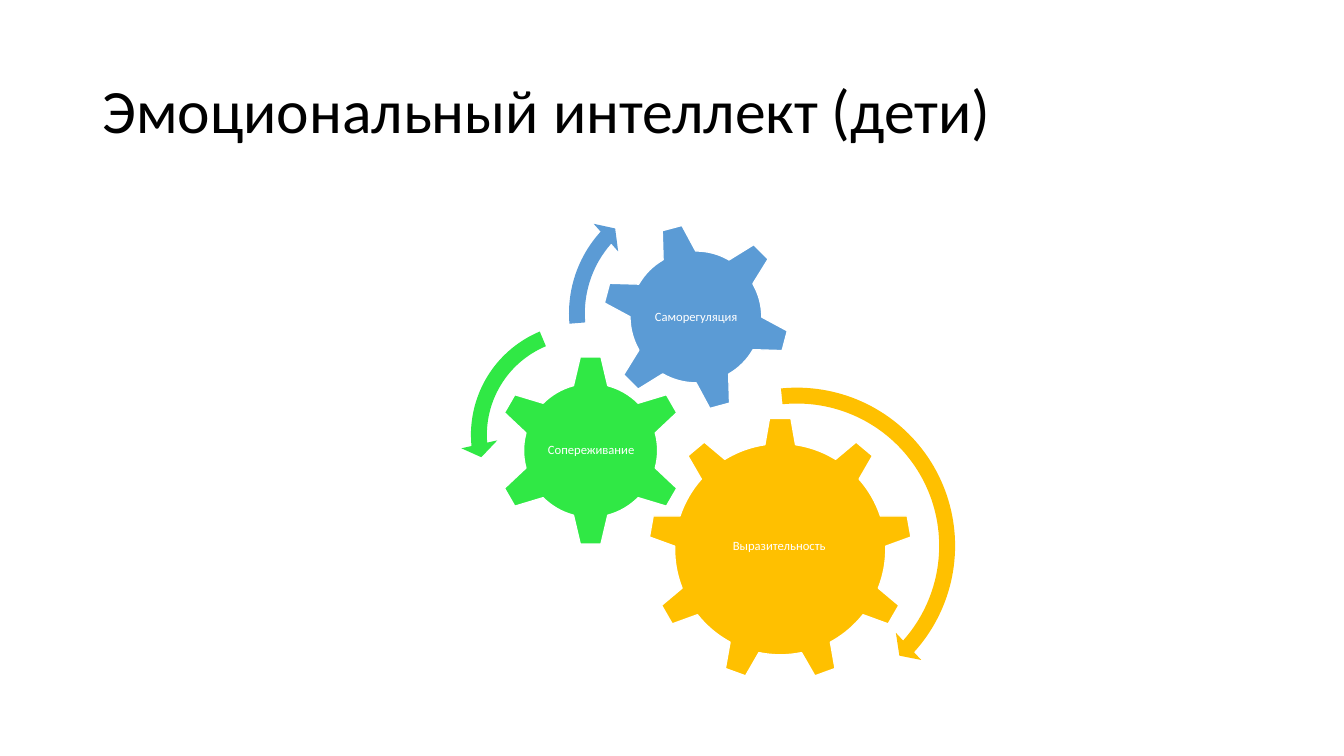
"""Build a slide with three interlocking gears of children's emotional intelligence."""
from pptx import Presentation
from pptx.dml.color import RGBColor
from pptx.enum import shapes, text
from pptx.util import Pt

FONT = "Calibri"
COLORS = {
    "black": "000000",
    "white": "FFFFFF",
    "gold": "FFC000",
    "green": "30E845",
    "blue": "5B9BD5",
}
SHAPE = shapes.MSO_SHAPE
ALIGN = text.PP_ALIGN

GEARS = [
    ("Выразительность", SHAPE.GEAR_9, "gold", 0,
     (463, 298, 188.6, 188.6), (500.4, 342, 112.3, 97.2)),
    ("Сопереживание", SHAPE.GEAR_6, "green", 0,
     (353.5, 253.4, 136.8, 136.8), (388, 288, 68.4, 67.7)),
    ("Саморегуляция", SHAPE.GEAR_6, "blue", 345,
     (429.8, 159.1, 134.6, 134.6), (459.4, 188.6, 75.6, 75.6)),
]
ARROWS = [
    (SHAPE.CIRCULAR_ARROW, "gold", (448.6, 269.3, 241.2, 241.2),
     (0.047, 2.99, 25.198, 158.534, 0.055)),
    (SHAPE.LEFT_CIRCULAR_ARROW, "green", (329, 223.2, 175, 175),
     (0.065, 4.3, 104.891, 148.378, 0.075)),
    (SHAPE.CIRCULAR_ARROW, "blue", (398.9, 129.6, 188.6, 188.6),
     (0.06, 3.941, 133.138, 105.082, 0.07)),
]


def color(name):
    """Return the named colour."""
    return RGBColor.from_string(COLORS[name])


def points(place):
    """Convert a sequence of numbers to point lengths."""
    return [Pt(value) for value in place]


def write(box, words, size=9, ink="white", align=ALIGN.CENTER, inset=None):
    """Put one formatted paragraph into a box."""
    frame = box.text_frame
    frame.word_wrap = True
    frame.auto_size = text.MSO_AUTO_SIZE.NONE
    frame.vertical_anchor = text.MSO_ANCHOR.MIDDLE
    if inset is not None:
        frame.margin_left = frame.margin_right = Pt(inset)
        frame.margin_top = frame.margin_bottom = Pt(inset)
    para = frame.paragraphs[0]
    para.alignment = align
    para.line_spacing = 0.9
    span = para.add_run()
    span.text = words
    span.font.name = FONT
    span.font.size = Pt(size)
    span.font.color.rgb = color(ink)


def add_title(slide, words):
    """Place and fill the title placeholder."""
    title = slide.shapes.title
    title.left, title.top, title.width, title.height = points((66, 28.8, 828, 104.4))
    write(title, words, size=44, ink="black", align=ALIGN.LEFT)


def add_solid(group, kind, fill, place):
    """Add a filled preset shape without shadow or outline."""
    shape = group.shapes.add_shape(kind, *points(place))
    shape.shadow.inherit = False
    shape.fill.solid()
    shape.fill.fore_color.rgb = color(fill)
    shape.line.fill.background()
    return shape


def add_gear(group, label, kind, fill, rotation, place, label_place):
    """Add a gear with a white outline and its label."""
    gear = add_solid(group, kind, fill, place)
    gear.rotation = rotation
    gear.line.color.rgb = color("white")
    gear.line.width = Pt(1)
    box = group.shapes.add_textbox(*points(label_place))
    write(box, label, inset=0.9)


def add_arrow(group, kind, fill, place, adjustments):
    """Add a curved arrow that shows the turn of a gear."""
    arrow = add_solid(group, kind, fill, place)
    for index, value in enumerate(adjustments):
        arrow.adjustments[index] = value


def main():
    """Build and save the deck."""
    deck = Presentation()
    deck.slide_width, deck.slide_height = Pt(960), Pt(540)
    slide = deck.slides.add_slide(deck.slide_layouts.get_by_name("Title Only"))
    add_title(slide, "Эмоциональный интеллект (дети)")
    group = slide.shapes.add_group_shape()
    for gear in GEARS:
        add_gear(group, *gear)
    for arrow in ARROWS:
        add_arrow(group, *arrow)
    deck.save("out.pptx")


if __name__ == "__main__":
    main()
